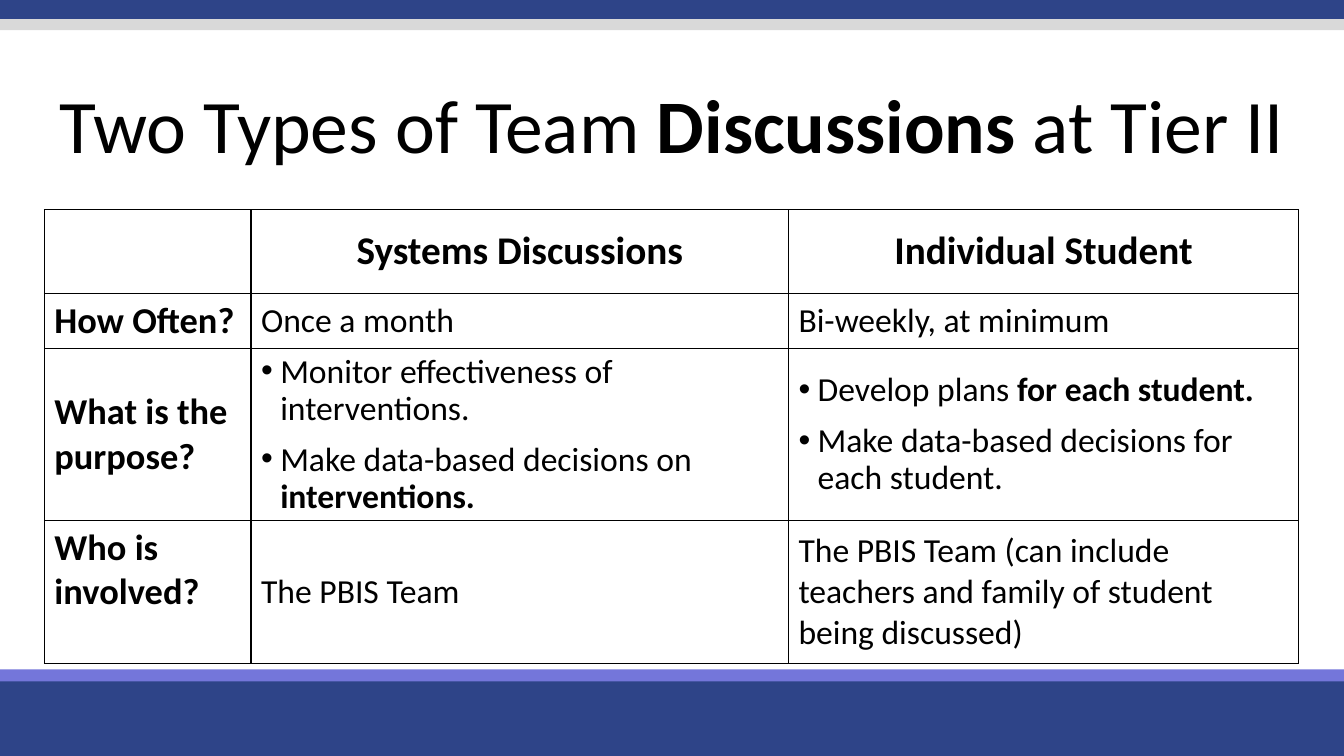
from lxml import etree
from pptx import Presentation
from pptx import util as u
from pptx.dml.color import RGBColor
from pptx.enum import shapes, text
from pptx.oxml.ns import qn

WIDTH, HEIGHT = 13.33, 7.5
BLACK, NAVY, VIOLET, GREY = "000000", "2E4488", "7476DA", "D9D9D9"
BANDS = [(6.7, 0.8, NAVY), (6.64, 0.12, VIOLET), (0, 0.19, NAVY), (0.19, 0.11, GREY)]

COLUMNS = [2.05, 5.33, 5.06]
ROWS = [0.83, 0.55, 1.7, 1.42]
CENTER = text.PP_ALIGN.CENTER
MIDDLE, TOP = text.MSO_ANCHOR.MIDDLE, text.MSO_ANCHOR.TOP

HEADER = {"size": 28, "bold": True}
LABEL = {"size": 26, "bold": True}
BODY = {"size": 24, "bold": False}

# Each cell is a list of paragraphs; ** switches bold on and off.
TABLE = [
    [[], ["Systems Discussions"], ["Individual Student"]],
    [["How Often?"], ["Once a month"], ["Bi-weekly, at minimum"]],
    [["What is the purpose?"],
     ["Monitor effectiveness of interventions.",
      "Make data-based decisions on **interventions.**"],
     ["Develop plans **for each student.**",
      "Make data-based decisions for each student."]],
    [["Who is involved?"], ["The PBIS Team"],
     ["The PBIS Team (can include teachers and family of student being discussed)"]],
]


def rgb(color):
    return RGBColor.from_string(color)


def set_values(obj, values):
    for name, value in values.items():
        setattr(obj, name, value)


def add_band(s, top, height, color):
    sp = s.shapes.add_shape(shapes.MSO_SHAPE.RECTANGLE, 0, u.Inches(top),
                            u.Inches(WIDTH), u.Inches(height))
    sp.shadow.inherit = False
    sp.fill.solid()
    sp.fill.fore_color.rgb = rgb(color)
    sp.line.fill.background()


def add_runs(p, marked, size, bold):
    for i, part in enumerate(marked.split("**")):
        if part:
            r = p.add_run()
            r.text = part
            set_values(r.font, {"name": "Calibri", "size": u.Pt(size),
                                "bold": bold or i % 2 == 1})
            r.font.color.rgb = rgb(BLACK)


def add_bullet(p):
    pPr = p._p.get_or_add_pPr()
    pPr.set("marL", str(u.Inches(0.19)))
    pPr.set("indent", str(-u.Inches(0.19)))
    etree.SubElement(pPr, qn("a:buFont"), typeface="Arial")
    etree.SubElement(pPr, qn("a:buChar"), char="•")


def add_borders(cell):
    tcPr = cell._tc.get_or_add_tcPr()
    for i, side in enumerate(("lnL", "lnR", "lnT", "lnB")):
        ln = etree.Element(qn("a:" + side), w=str(u.Pt(1)))
        fill = etree.SubElement(ln, qn("a:solidFill"))
        etree.SubElement(fill, qn("a:srgbClr"), val=BLACK)
        tcPr.insert(i, ln)


def fill_cell(cell, paragraphs, style, bullets, values):
    tf = cell.text_frame
    for i, marked in enumerate(paragraphs):
        p = tf.add_paragraph() if i else tf.paragraphs[0]
        if bullets:
            add_bullet(p)
        if i:
            p.space_before = u.Pt(10)
        set_values(p, values)
        add_runs(p, marked, **style)


def add_discussion_table(s):
    frame = s.shapes.add_table(len(ROWS), len(COLUMNS), u.Inches(0.44), u.Inches(2.08),
                               u.Inches(sum(COLUMNS)), u.Inches(sum(ROWS)))
    table = frame.table
    set_values(table, {"first_row": False, "horz_banding": False})
    for column, width in zip(table.columns, COLUMNS):
        column.width = u.Inches(width)
    for row, height in zip(table.rows, ROWS):
        row.height = u.Inches(height)
    for y, row in enumerate(TABLE):
        for x, paragraphs in enumerate(row):
            cell = table.cell(y, x)
            cell.fill.background()
            add_borders(cell)
            cell.vertical_anchor = TOP if (y, x) == (3, 0) else MIDDLE
            style = HEADER if y == 0 else LABEL if x == 0 else BODY
            bullets = len(paragraphs) > 1
            values = {"alignment": CENTER} if y == 0 else {}
            if bullets or (y, x) == (0, 1):
                values["line_spacing"] = 0.9
            fill_cell(cell, paragraphs, style, bullets, values)


def add_title(s, marked):
    tf = s.shapes.add_textbox(0, u.Inches(0.69), u.Inches(WIDTH), u.Inches(1.18)).text_frame
    set_values(tf, {"word_wrap": True, "vertical_anchor": MIDDLE})
    p = tf.paragraphs[0]
    set_values(p, {"alignment": CENTER, "line_spacing": 0.9})
    add_runs(p, marked, 54, False)


def main():
    prs = Presentation()
    set_values(prs, {"slide_width": u.Inches(WIDTH), "slide_height": u.Inches(HEIGHT)})
    s = prs.slides.add_slide(prs.slide_layouts[6])
    for band in BANDS:
        add_band(s, *band)
    add_discussion_table(s)
    add_title(s, "Two Types of Team **Discussions** at Tier II")
    prs.save("out.pptx")


if __name__ == "__main__":
    main()
